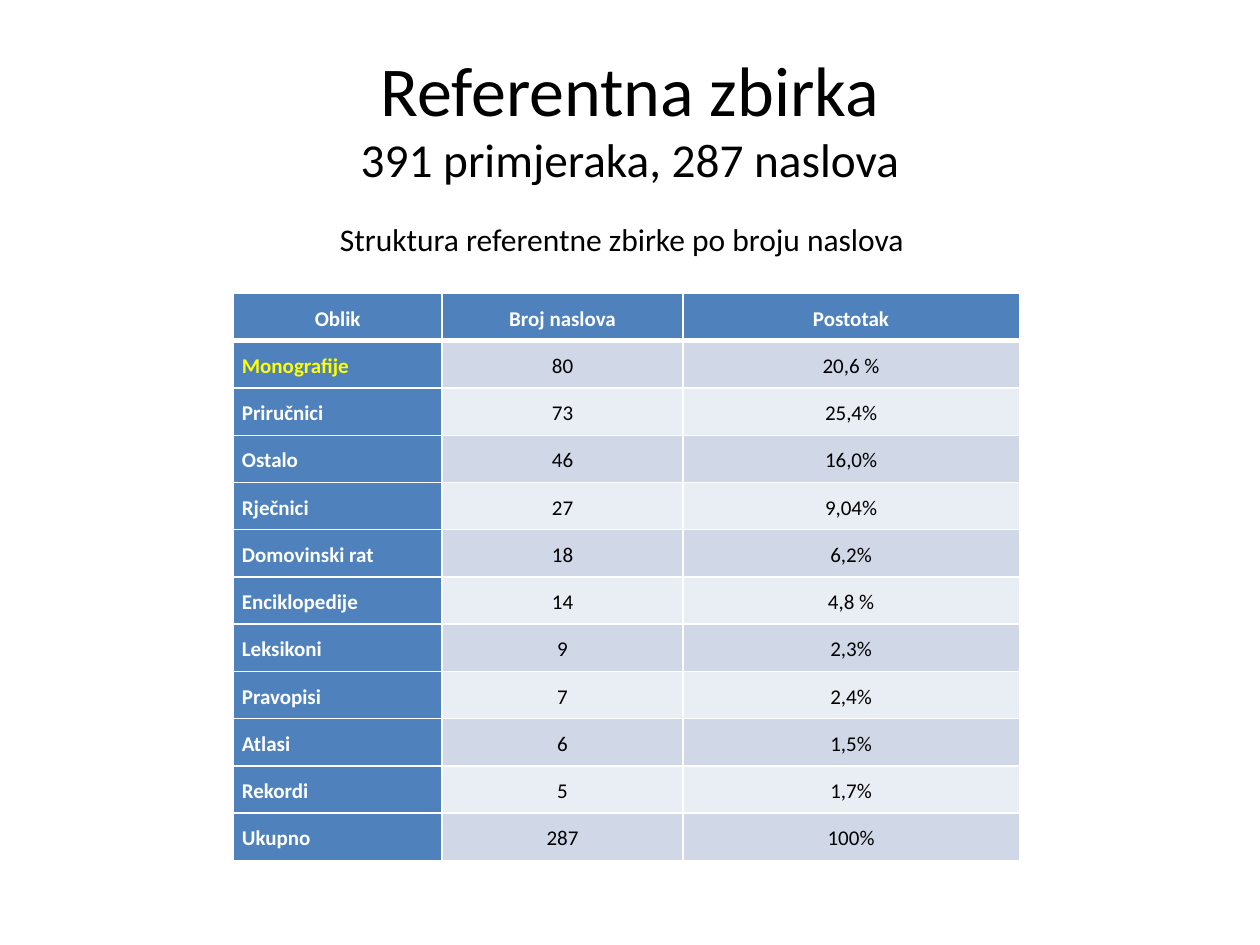
"""Build the slide on the structure of a library reference collection."""
from lxml import etree
from pptx import Presentation
from pptx.dml.color import RGBColor
from pptx.enum.text import MSO_ANCHOR, PP_ALIGN
from pptx.oxml.ns import qn
from pptx.util import Inches, Pt

CENTER, JUSTIFY = PP_ALIGN.CENTER, PP_ALIGN.JUSTIFY
MIDDLE = MSO_ANCHOR.MIDDLE
BLACK, WHITE, YELLOW, BLUE = "000000", "FFFFFF", "FFFF00", "4F81BD"
BANDS = ["D0D8E8", "E9EDF4"]
ROWS = [
    ("Oblik", "Broj naslova", "Postotak"),
    ("Monografije", "80", "20,6 %"),
    ("Priručnici", "73", "25,4%"),
    ("Ostalo", "46", "16,0%"),
    ("Rječnici", "27", "9,04%"),
    ("Domovinski rat", "18", "6,2%"),
    ("Enciklopedije", "14", "4,8 %"),
    ("Leksikoni", "9", "2,3%"),
    ("Pravopisi", "7", "2,4%"),
    ("Atlasi", "6", "1,5%"),
    ("Rekordi", "5", "1,7%"),
    ("Ukupno", "287", "100%"),
]


def write(para, text, size=12, color=BLACK, bold=False):
    span = para.add_run()
    span.text = text
    span.font.name = "Calibri"
    span.font.size = Pt(size)
    span.font.bold = bold
    span.font.color.rgb = RGBColor.from_string(color)


def add_border(cell, side, width):
    line = etree.SubElement(cell._tc.get_or_add_tcPr(), qn(f"a:ln{side}"), w=str(Pt(width)))
    fill = etree.SubElement(line, qn("a:solidFill"))
    etree.SubElement(fill, qn("a:srgbClr"), val=WHITE)


deck = Presentation()
deck.slide_width, deck.slide_height = Inches(10), Inches(7.5)
page = deck.slides.add_slide(deck.slide_layouts[6])

title = page.shapes.add_textbox(Inches(0.5), Inches(0.3), Inches(9), Inches(1.25)).text_frame
title.word_wrap = True
title.vertical_anchor = MIDDLE
para = title.paragraphs[0]
para.alignment = CENTER
write(para, "Referentna zbirka", size=40)
para.add_line_break()
write(para, "391 primjeraka, 287 naslova", size=27)

table = page.shapes.add_table(
    len(ROWS), 3, Inches(1.85), Inches(2.33), Inches(6.24), Inches(4.5)
).table
table.first_col = True
for column, width in zip(table.columns, (1.66, 1.91, 2.67)):
    column.width = Inches(width)

for row_index, texts in enumerate(ROWS):
    table.rows[row_index].height = Inches(4.5 / len(ROWS))
    for column_index, text in enumerate(texts):
        cell = table.cell(row_index, column_index)
        is_header = row_index == 0
        is_label = is_header or column_index == 0
        add_border(cell, "L", 1)
        add_border(cell, "R", 1)
        add_border(cell, "T", 3 if row_index == 1 else 1)
        add_border(cell, "B", 3 if is_header else 1)
        cell.fill.solid()
        cell.fill.fore_color.rgb = RGBColor.from_string(
            BLUE if is_label else BANDS[(row_index - 1) % 2]
        )
        cell.margin_left = cell.margin_right = Inches(0.07)
        cell.margin_top = cell.margin_bottom = 0
        para = cell.text_frame.paragraphs[0]
        para.alignment = JUSTIFY if is_label and not is_header else CENTER
        para.line_spacing = 1.5
        color = YELLOW if text == "Monografije" else WHITE if is_label else BLACK
        write(para, text, color=color, bold=is_label)

caption = page.shapes.add_textbox(Inches(2.6), Inches(1.7), Inches(4.73), Inches(0.4)).text_frame
caption.word_wrap = False
write(caption.paragraphs[0], "Struktura referentne zbirke po broju naslova", size=18)

deck.save("out.pptx")
